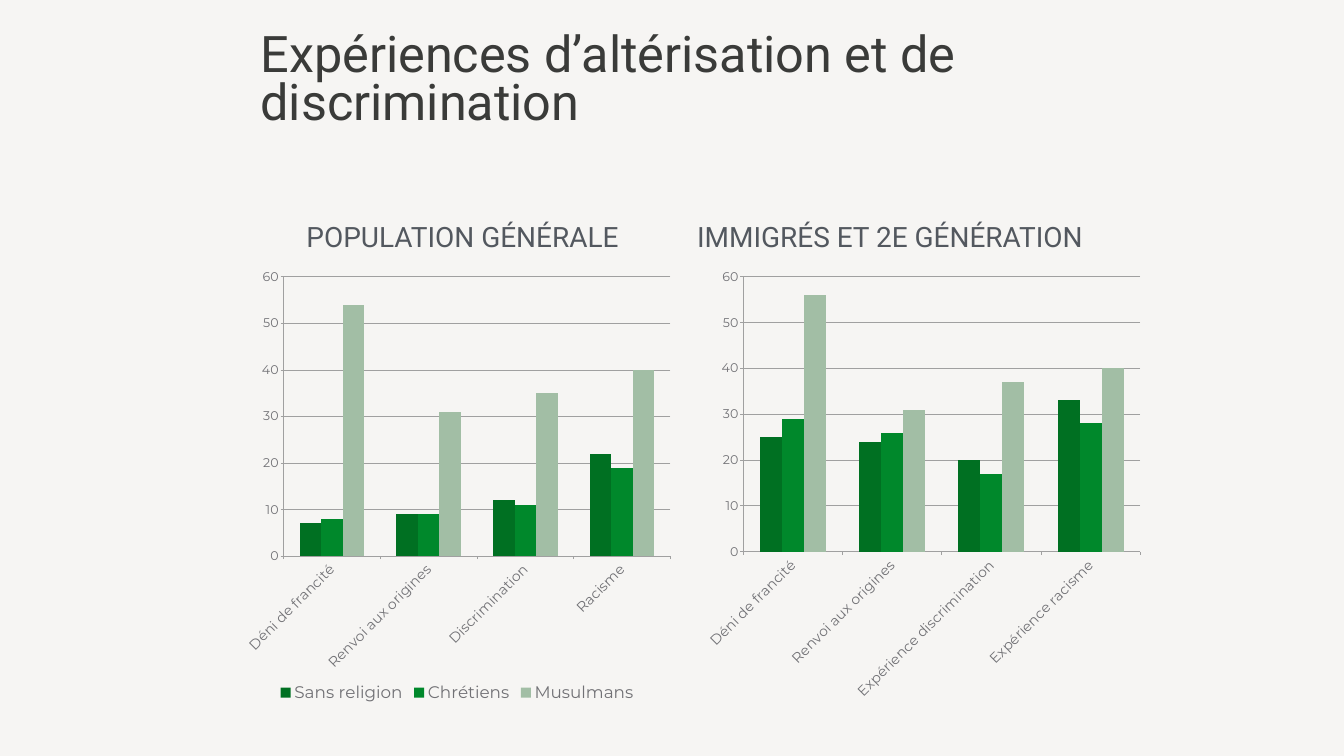
from lxml import etree
from pptx import Presentation
from pptx import util as u
from pptx.chart.data import CategoryChartData
from pptx.dml.color import RGBColor
from pptx.enum import chart as charts
from pptx.enum import text
from pptx.oxml import parse_xml
from pptx.oxml.ns import nsdecls, qn

PX = 9525  # EMU per px, at 96 px to the inch

PAPER = RGBColor(0xF6, 0xF5, 0xF3)
INK = RGBColor(0x3A, 0x3B, 0x39)
SLATE = RGBColor(0x53, 0x58, 0x5F)
LABEL = RGBColor(0x71, 0x71, 0x75)
RULE = RGBColor(0xA0, 0xA0, 0xA0)
GREENS = [
    RGBColor(0x00, 0x70, 0x22),
    RGBColor(0x00, 0x88, 0x2B),
    RGBColor(0xA2, 0xBE, 0xA5),
]


def add_text(page, bounds, wording, size, color):
    box = page.shapes.add_textbox(*[n * PX for n in bounds])
    frame = box.text_frame
    frame.word_wrap = True
    frame.margin_left = frame.margin_right = 4 * PX
    frame.margin_top = frame.margin_bottom = 4 * PX
    frame.text = wording
    font = frame.paragraphs[0].runs[0].font
    font.name = "Roboto"
    font.size = u.Pt(size)
    font.color.rgb = color
    return frame


def set_layout(element, before, target, x, y, w, h):
    """Fix a chart part by fractions of the chart, after the child `before`."""
    for old in element.findall(qn("c:layout")):
        element.remove(old)
    layout = parse_xml(f"<c:layout {nsdecls('c')}/>")
    manual = etree.SubElement(layout, qn("c:manualLayout"))
    settings = [("xMode", "edge"), ("yMode", "edge"), ("x", x), ("y", y), ("w", w), ("h", h)]
    if target:
        settings.insert(0, ("layoutTarget", target))
    for name, value in settings:
        etree.SubElement(manual, qn(f"c:{name}")).set("val", str(value))
    if before is None:
        element.insert(0, layout)
    else:
        before.addnext(layout)


deck = Presentation()
deck.slide_width = 2560 * PX
deck.slide_height = 1440 * PX
page = deck.slides.add_slide(deck.slide_layouts[6])
page.background.fill.solid()
page.background.fill.fore_color.rgb = PAPER

title = add_text(
    page, (492, 60, 1584, 236), "Expériences d’altérisation et de discrimination", 72, INK
)
title.paragraphs[0].line_spacing = 0.8

GROUPS = ["Sans religion", "Chrétiens", "Musulmans"]
panels = [
    {
        "heading": "POPULATION GÉNÉRALE",
        "heading_bounds": (492, 372, 778, 155),
        "chart_bounds": (447, 493, 847, 858),
        "plot": (0.11, 0.04, 0.87, 0.62),
        "categories": ["Déni de francité", "Renvoi aux origines", "Discrimination", "Racisme"],
        "values": [(7, 9, 12, 22), (8, 9, 11, 19), (54, 31, 35, 40)],
        "legend": True,
    },
    {
        "heading": "IMMIGRÉS ET 2E GÉNÉRATION",
        "heading_bounds": (1306, 373, 778, 155),
        "chart_bounds": (1330, 493, 859, 858),
        "plot": (0.1, 0.04, 0.88, 0.61),
        "categories": [
            "Déni de francité",
            "Renvoi aux origines",
            "Expérience discrimination",
            "Expérience racisme",
        ],
        "values": [(25, 24, 20, 33), (29, 26, 17, 28), (56, 31, 37, 40)],
        "legend": False,
    },
]

for panel in panels:
    heading = add_text(page, panel["heading_bounds"], panel["heading"], 40, SLATE)
    heading.vertical_anchor = text.MSO_ANCHOR.MIDDLE
    heading.paragraphs[0].alignment = text.PP_ALIGN.CENTER

    data = CategoryChartData()
    data.categories = panel["categories"]
    for group, values in zip(GROUPS, panel["values"]):
        data.add_series(group, values)
    chart = page.shapes.add_chart(
        charts.XL_CHART_TYPE.COLUMN_CLUSTERED, *[n * PX for n in panel["chart_bounds"]], data
    ).chart
    chart.has_title = False
    chart.font.name = "Montserrat"
    chart.font.size = u.Pt(18)
    chart.font.color.rgb = LABEL

    plot = chart.plots[0]
    plot.gap_width = 150
    plot.overlap = 0
    plot.vary_by_categories = False
    for series, green in zip(plot.series, GREENS):
        series.format.fill.solid()
        series.format.fill.fore_color.rgb = green
    set_layout(chart._chartSpace.chart.plotArea, None, "inner", *panel["plot"])

    value_axis = chart.value_axis
    value_axis.minimum_scale = 0
    value_axis.maximum_scale = 60
    value_axis.major_unit = 10
    value_axis.has_major_gridlines = True
    category_axis = chart.category_axis
    category_axis.tick_label_position = charts.XL_TICK_LABEL_POSITION.LOW
    category_axis.tick_labels.font.size = u.Pt(20)
    category_axis._element.find(qn("c:txPr")).find(qn("a:bodyPr")).set("rot", "-2700000")
    for axis in (value_axis, category_axis):
        axis.major_tick_mark = charts.XL_TICK_MARK.OUTSIDE
    for part in (value_axis, category_axis, value_axis.major_gridlines):
        part.format.line.color.rgb = RULE
        part.format.line.width = u.Pt(1)

    chart.has_legend = panel["legend"]
    if panel["legend"]:
        legend = chart.legend
        legend.position = charts.XL_LEGEND_POSITION.BOTTOM
        legend.include_in_layout = False
        legend.font.size = u.Pt(24)
        position = legend._element.find(qn("c:legendPos"))
        set_layout(legend._element, position, None, 0.09, 0.94, 0.82, 0.05)

deck.save("out.pptx")
